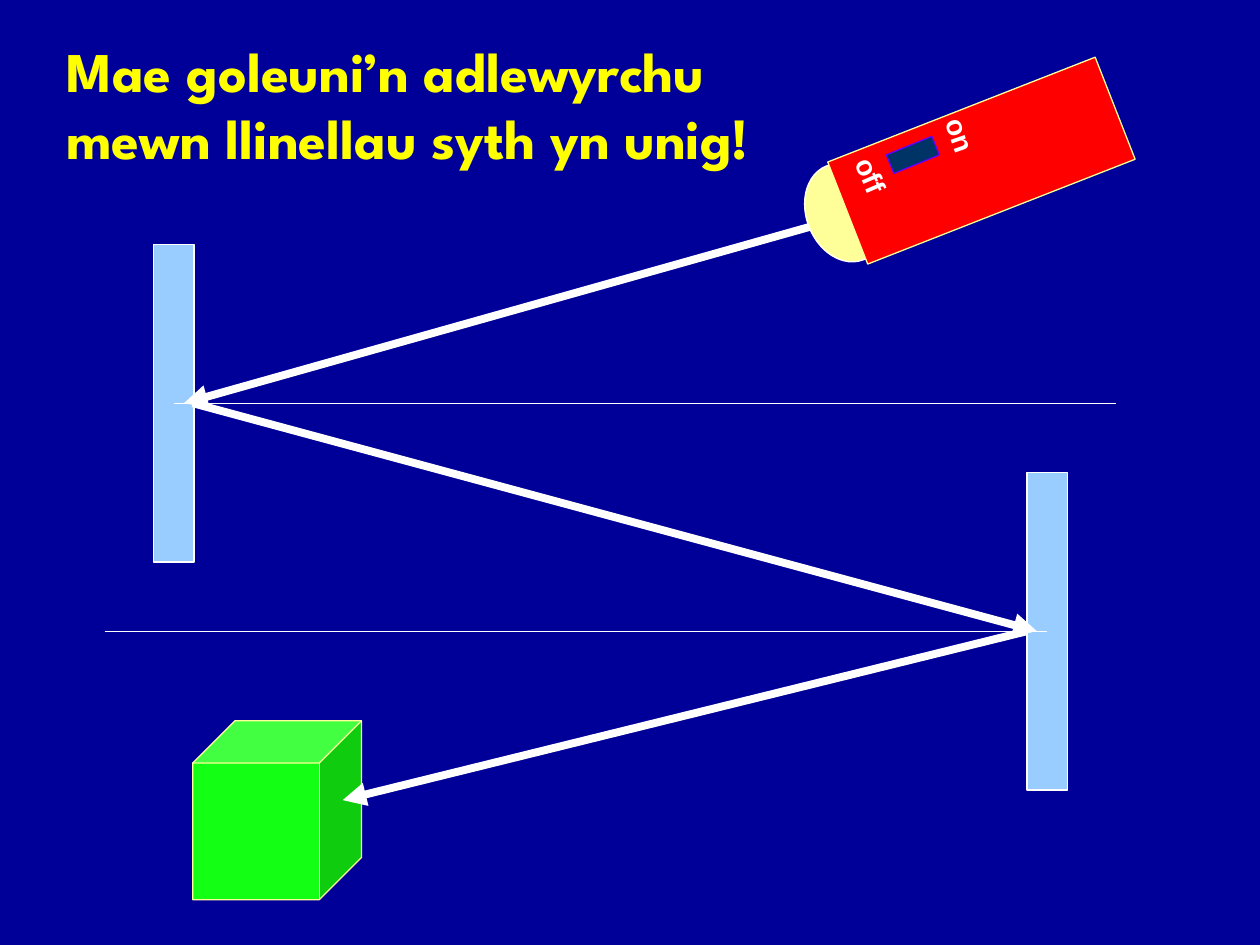
from dataclasses import dataclass
from typing import Any, NamedTuple

import lxml.etree
import pptx
import pptx.dml.color
import pptx.enum.shapes
import pptx.enum.text
import pptx.oxml.ns
import pptx.util

COLUMNS, ROWS = 100, 75
SHAPE = pptx.enum.shapes.MSO_SHAPE
ANCHOR = pptx.enum.text.MSO_ANCHOR
FIT = pptx.enum.text.MSO_AUTO_SIZE


@dataclass(frozen=True)
class Theme:
    background: str = "000099"
    white: str = "FFFFFF"
    title: str = "FFFF00"
    mirror: str = "99CCFF"
    box: str = "13FF13"
    glow: str = "FFFF99"
    casing: str = "FF0000"
    switch: str = "003366"
    switch_edge: str = "6600FF"
    title_font: str = "League Spartan"
    label_font: str = "Arial"
    title_size: float = 32
    label_size: float = 16
    hairline: float = 0.75
    beam: float = 4.5


class Area(NamedTuple):
    column: float
    row: float
    columns: float
    rows: float


class Point(NamedTuple):
    column: float
    row: float


@dataclass(frozen=True)
class Solid:
    kind: Any
    area: Area
    fill: str
    edge: str
    rotation: float = 0


@dataclass(frozen=True)
class Ray:
    start: Point
    end: Point
    width: float
    arrow: bool = False


@dataclass(frozen=True)
class Caption:
    text: str
    area: Area
    font: str
    size: float
    color: str
    frame: dict[str, Any]
    rotation: float = 0


theme = Theme()
deck = pptx.Presentation()
deck.slide_width = pptx.util.Inches(10)
deck.slide_height = pptx.util.Inches(7.5)


def across(columns: float) -> int:
    return round(deck.slide_width * columns / COLUMNS)


def down(rows: float) -> int:
    return round(deck.slide_height * rows / ROWS)


def place(area: Area) -> tuple[int, int, int, int]:
    return across(area.column), down(area.row), across(area.columns), down(area.rows)


def rgb(color: str) -> pptx.dml.color.RGBColor:
    return pptx.dml.color.RGBColor.from_string(color)


def set_all(target: Any, values: dict[str, Any]) -> None:
    for name, value in values.items():
        setattr(target, name, value)


def stroke(line: Any, color: str, width: float) -> None:
    line.color.rgb = rgb(color)
    line.width = pptx.util.Pt(width)


def draw_solid(shapes: Any, solid: Solid) -> None:
    body = shapes.add_shape(solid.kind, *place(solid.area))
    body.rotation = solid.rotation
    body.shadow.inherit = False
    body.fill.solid()
    body.fill.fore_color.rgb = rgb(solid.fill)
    stroke(body.line, solid.edge, theme.hairline)


def draw_ray(shapes: Any, ray: Ray) -> None:
    path = shapes.add_connector(
        pptx.enum.shapes.MSO_CONNECTOR.STRAIGHT,
        across(ray.start.column), down(ray.start.row),
        across(ray.end.column), down(ray.end.row),
    )
    stroke(path.line, theme.white, ray.width)
    properties = path._element.spPr
    if ray.arrow:
        outline = properties.find(pptx.oxml.ns.qn("a:ln"))
        lxml.etree.SubElement(outline, pptx.oxml.ns.qn("a:tailEnd"), type="triangle")
    lxml.etree.SubElement(properties, pptx.oxml.ns.qn("a:effectLst"))


def draw_caption(shapes: Any, caption: Caption) -> None:
    holder = shapes.add_textbox(*place(caption.area))
    holder.rotation = caption.rotation
    set_all(holder.text_frame, caption.frame)
    words = holder.text_frame.paragraphs[0].add_run()
    words.text = caption.text
    words.font.color.rgb = rgb(caption.color)
    set_all(words.font, {
        "name": caption.font, "size": pptx.util.Pt(caption.size), "bold": True,
    })


def mirror(column: float, row: float) -> Solid:
    return Solid(SHAPE.RECTANGLE, Area(column, row, 3.2, 25.2), theme.mirror, theme.white)


def switch_label(text: str, column: float, row: float, rotation: float, wrap: bool) -> Caption:
    return Caption(
        text, Area(column, row, 4.9, 3.7), theme.label_font, theme.label_size, theme.white,
        {"word_wrap": wrap, "auto_size": FIT.SHAPE_TO_FIT_TEXT}, rotation,
    )


def normal(column: float, row: float) -> Ray:
    return Ray(Point(column, row), Point(column + 74.8, row), theme.hairline)


UPPER, LOWER = 32, 50.1
TILT = 338.6

targets = [
    mirror(12.2, 19.4),
    mirror(81.5, 37.5),
    Solid(SHAPE.CUBE, Area(15.3, 57.2, 13.4, 14.2), theme.box, theme.glow),
]
beams = [
    Ray(Point(65, 17.8), Point(14.6, UPPER), theme.beam, True),
    Ray(Point(15.3, UPPER), Point(82.3, LOWER), theme.beam, True),
    Ray(Point(81.5, LOWER), Point(27.2, 63.5), theme.beam, True),
]
title = Caption(
    "Mae goleuni’n adlewyrchu mewn llinellau syth yn unig!",
    Area(4.3, 3.6, 63.9, 9.3), theme.title_font, theme.title_size, theme.title,
    {"word_wrap": True, "vertical_anchor": ANCHOR.MIDDLE},
)
torch_parts = [
    Solid(SHAPE.OVAL, Area(64, 12.9, 6.1, 8), theme.glow, theme.white, TILT),
    Solid(SHAPE.RECTANGLE, Area(66.5, 8.4, 22.8, 8.7), theme.casing, theme.glow, TILT),
    Solid(SHAPE.RECTANGLE, Area(70.5, 11.5, 3.9, 1.6), theme.switch, theme.switch_edge, 337.8),
]
torch_labels = [
    switch_label("on", 73.8, 9, 70.9, True),
    switch_label("off", 66.7, 12.1, 66.7, False),
]
normals = [normal(13.8, UPPER), normal(8.3, LOWER)]


def main() -> None:
    slide = deck.slides.add_slide(deck.slide_layouts[6])
    slide.background.fill.solid()
    slide.background.fill.fore_color.rgb = rgb(theme.background)
    for target in targets:
        draw_solid(slide.shapes, target)
    for beam in beams:
        draw_ray(slide.shapes, beam)
    draw_caption(slide.shapes, title)
    torch = slide.shapes.add_group_shape()
    for part in torch_parts:
        draw_solid(torch.shapes, part)
    for label in torch_labels:
        draw_caption(torch.shapes, label)
    for line in normals:
        draw_ray(slide.shapes, line)
    deck.save("out.pptx")


if __name__ == "__main__":
    main()
